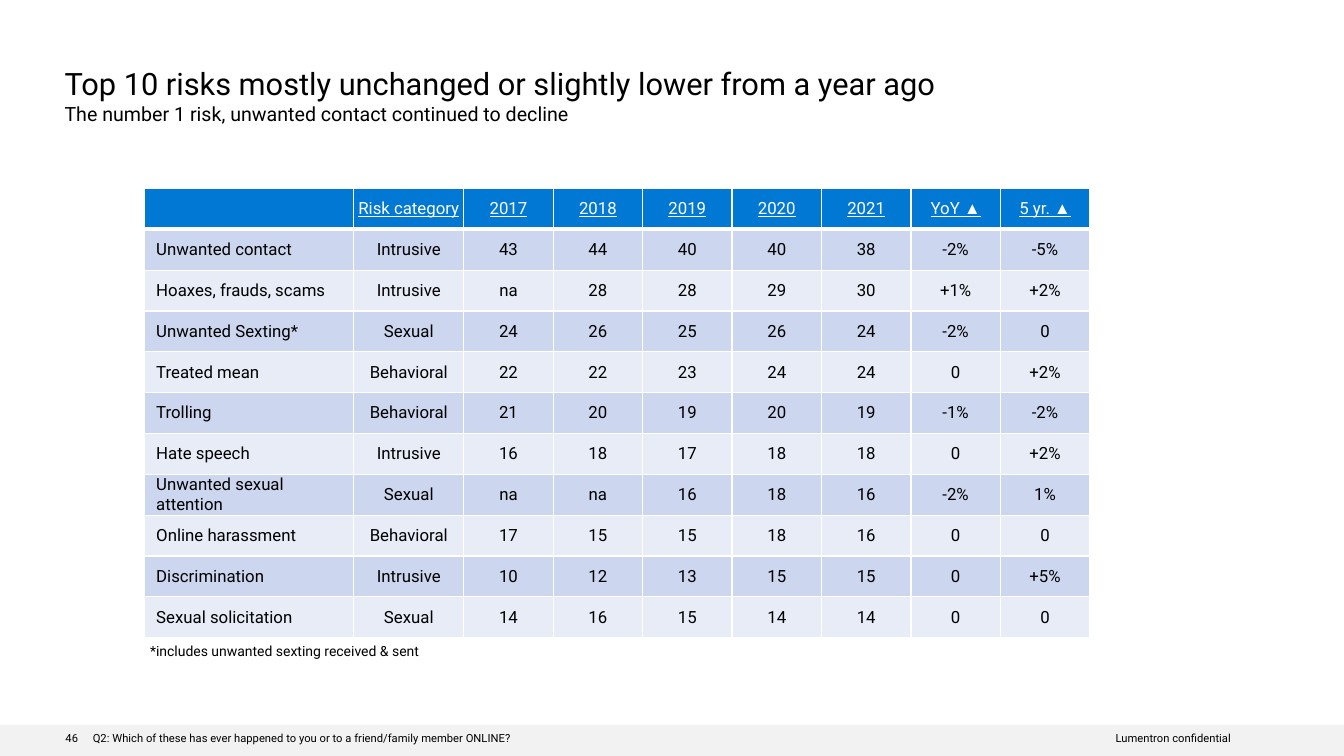
from pptx import Presentation
from pptx.dml.color import RGBColor
from pptx.enum.shapes import MSO_SHAPE
from pptx.enum.text import MSO_ANCHOR, MSO_AUTO_SIZE, PP_ALIGN
from pptx.oxml import parse_xml
from pptx.oxml.ns import nsdecls
from pptx.util import Inches, Pt

RECT = MSO_SHAPE.RECTANGLE
TOP, MIDDLE = MSO_ANCHOR.TOP, MSO_ANCHOR.MIDDLE
LEFT, CENTER, RIGHT = PP_ALIGN.LEFT, PP_ALIGN.CENTER, PP_ALIGN.RIGHT
NO_FIT = MSO_AUTO_SIZE.NONE

BLACK, WHITE, GRAY = "000000", "FFFFFF", "F2F2F2"
BLUE, BAND_DARK, BAND_LIGHT = "0078D4", "CCD6EF", "E7ECF7"
ARROW = "▲"

HEADER = ["", "Risk category", "2017", "2018", "2019", "2020", "2021", "YoY ▲", "5 yr. ▲"]
RISKS = [
    ["Unwanted contact", "Intrusive", "43", "44", "40", "40", "38", "-2%", "-5%"],
    ["Hoaxes, frauds, scams", "Intrusive", "na", "28", "28", "29", "30", "+1%", "+2%"],
    ["Unwanted Sexting*", "Sexual", "24", "26", "25", "26", "24", "-2%", "0"],
    ["Treated mean", "Behavioral", "22", "22", "23", "24", "24", "0", "+2%"],
    ["Trolling", "Behavioral", "21", "20", "19", "20", "19", "-1%", "-2%"],
    ["Hate speech", "Intrusive", "16", "18", "17", "18", "18", "0", "+2%"],
    ["Unwanted sexual attention", "Sexual", "na", "na", "16", "18", "16", "-2%", "1%"],
    ["Online harassment", "Behavioral", "17", "15", "15", "18", "16", "0", "0"],
    ["Discrimination", "Intrusive", "10", "12", "13", "15", "15", "0", "+5%"],
    ["Sexual solicitation", "Sexual", "14", "16", "15", "14", "14", "0", "0"],
]


def rgb(color):
    return RGBColor.from_string(color)


class Deck:
    """Holds the presentation, its font and the current slide."""

    def __init__(self, font):
        self.font = font
        self.prs = Presentation()
        self.prs.slide_width, self.prs.slide_height = Inches(13.33), Inches(7.5)
        self.s = self.prs.slides.add_slide(self.prs.slide_layouts[5])

    def style(self, r, size, color=BLACK, underline=False):
        r.font.name = "Arial" if r.text == ARROW else self.font
        r.font.size = Pt(size)
        r.font.color.rgb = rgb(color)
        r.font.bold = False
        r.font.underline = underline

    def frame(self, tf, insets, wrap=True):
        tf.auto_size = NO_FIT
        tf.word_wrap = wrap
        tf.vertical_anchor = TOP
        tf.margin_left = tf.margin_right = Inches(insets[0])
        tf.margin_top = tf.margin_bottom = Inches(insets[1])

    def title(self, text, sizes, x, y, w, h):
        sp = self.s.shapes.title
        sp.left, sp.top, sp.width, sp.height = map(Inches, (x, y, w, h))
        self.frame(sp.text_frame, (0, 0))
        p = sp.text_frame.paragraphs[0]
        p.text = text
        p.alignment = LEFT
        for r, size in zip(p.runs, sizes):
            self.style(r, size)

    def bar(self, color, x, y, w, h):
        sp = self.s.shapes.add_shape(RECT, *map(Inches, (x, y, w, h)))
        sp.shadow.inherit = False
        sp.fill.solid()
        sp.fill.fore_color.rgb = rgb(color)
        sp.line.fill.background()

    def text(self, text, size, x, y, w, h, align=LEFT, insets=(0, 0), spacing=0.9, wrap=True):
        sp = self.s.shapes.add_textbox(*map(Inches, (x, y, w, h)))
        self.frame(sp.text_frame, insets, wrap)
        p = sp.text_frame.paragraphs[0]
        p.text = text
        p.alignment = align
        p.line_spacing = spacing
        self.style(p.runs[0], size)

    def borders(self, cell, top, bottom):
        tcPr = cell._tc.get_or_add_tcPr()
        for side, width in (("L", 1), ("R", 1), ("T", top), ("B", bottom)):
            tcPr.append(parse_xml(
                f'<a:ln{side} {nsdecls("a")} w="{Pt(width)}"><a:solidFill>'
                f'<a:srgbClr val="{WHITE}"/></a:solidFill></a:ln{side}>'))

    def cell(self, cell, text, row, col):
        header = row == 0
        self.borders(cell, 3 if row == 1 else 1, 3 if header else 1)
        cell.fill.solid()
        cell.fill.fore_color.rgb = rgb(BLUE if header else BAND_DARK if row % 2 else BAND_LIGHT)
        cell.vertical_anchor = MIDDLE
        cell.margin_right = cell.margin_top = cell.margin_bottom = 0
        cell.margin_left = Inches(0 if col else 0.12)
        p = cell.text_frame.paragraphs[0]
        p.alignment = CENTER if col else LEFT
        for part in text.partition(ARROW):
            if part:
                r = p.add_run()
                r.text = part
                self.style(r, 12, WHITE if header else BLACK, header)

    def table(self, rows, lead_widths, x, y, w, h):
        count = len(rows[0])
        tbl = self.s.shapes.add_table(len(rows), count, *map(Inches, (x, y, w, h))).table
        rest = (w - sum(lead_widths)) / (count - len(lead_widths))
        for i, column in enumerate(tbl.columns):
            column.width = Inches(lead_widths[i] if i < len(lead_widths) else rest)
        for i, values in enumerate(rows):
            tbl.rows[i].height = Inches(h / len(rows))
            for j, value in enumerate(values):
                self.cell(tbl.cell(i, j), value, i, j)


def main():
    deck = Deck("Roboto")
    deck.bar(GRAY, 0, 7.19, 13.33, 0.31)
    deck.text("46", 8, 0.65, 7.27, 5, 0.12)
    deck.text("Lumentron confidential", 8, 8.54, 7.27, 3.67, 0.12, align=RIGHT)
    deck.title("Top 10 risks mostly unchanged or slightly lower from a year ago\v"
               "The number 1 risk, unwanted contact continued to decline",
               (22, 14), 0.64, 0.64, 11.41, 0.61)
    deck.table([HEADER] + RISKS, (2.08, 1.09), 1.43, 1.87, 9.38, 4.46)
    deck.text("Q2: Which of these has ever happened to you or to a friend/family member ONLINE?",
              8, 0.72, 7.11, 4.62, 0.44, insets=(0.2, 0.16), wrap=False)
    deck.text("*includes unwanted sexting received & sent",
              10, 1.39, 6.33, 2.9, 0.27, insets=(0.1, 0.05), spacing=1.0, wrap=False)
    deck.prs.save("out.pptx")


if __name__ == "__main__":
    main()
